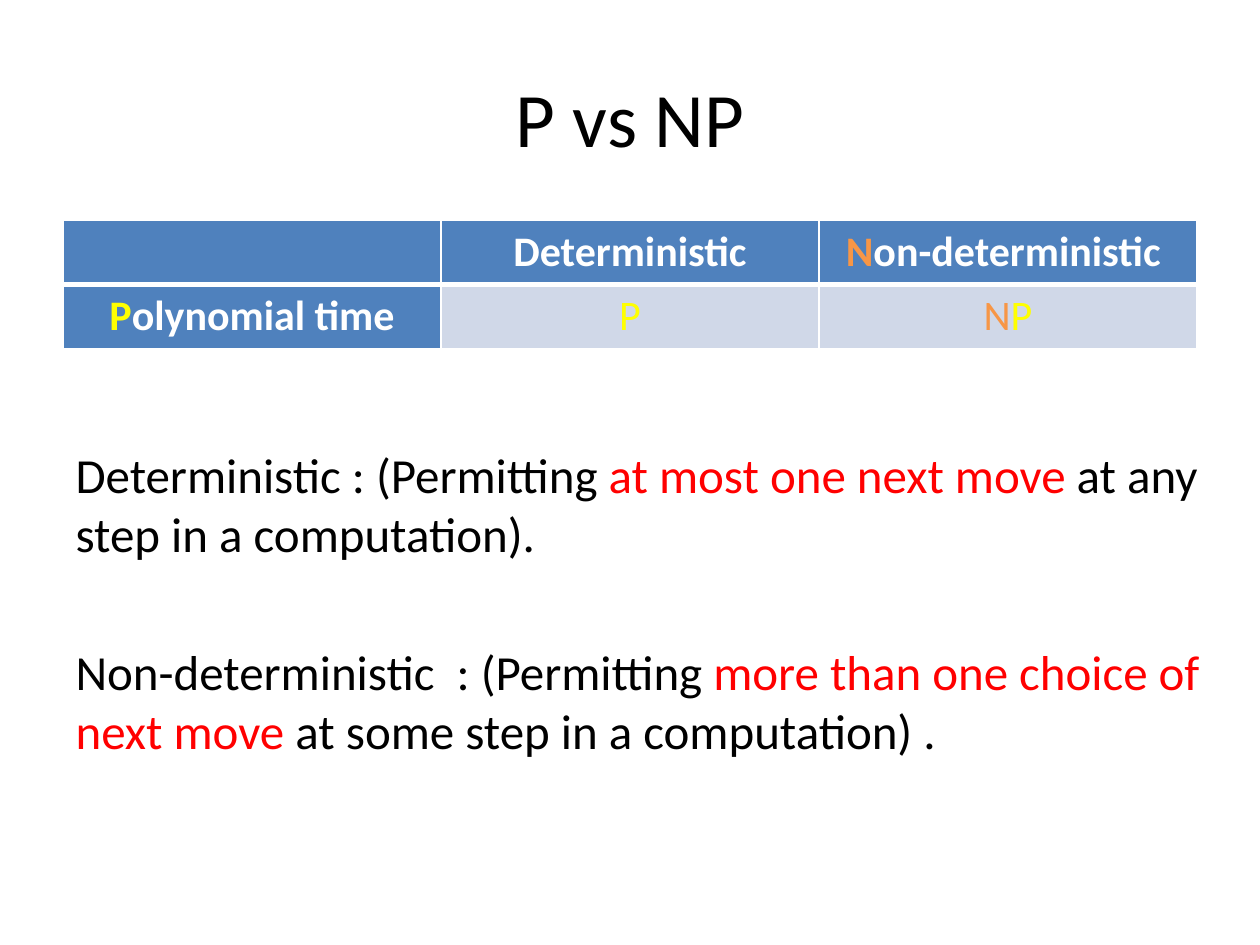
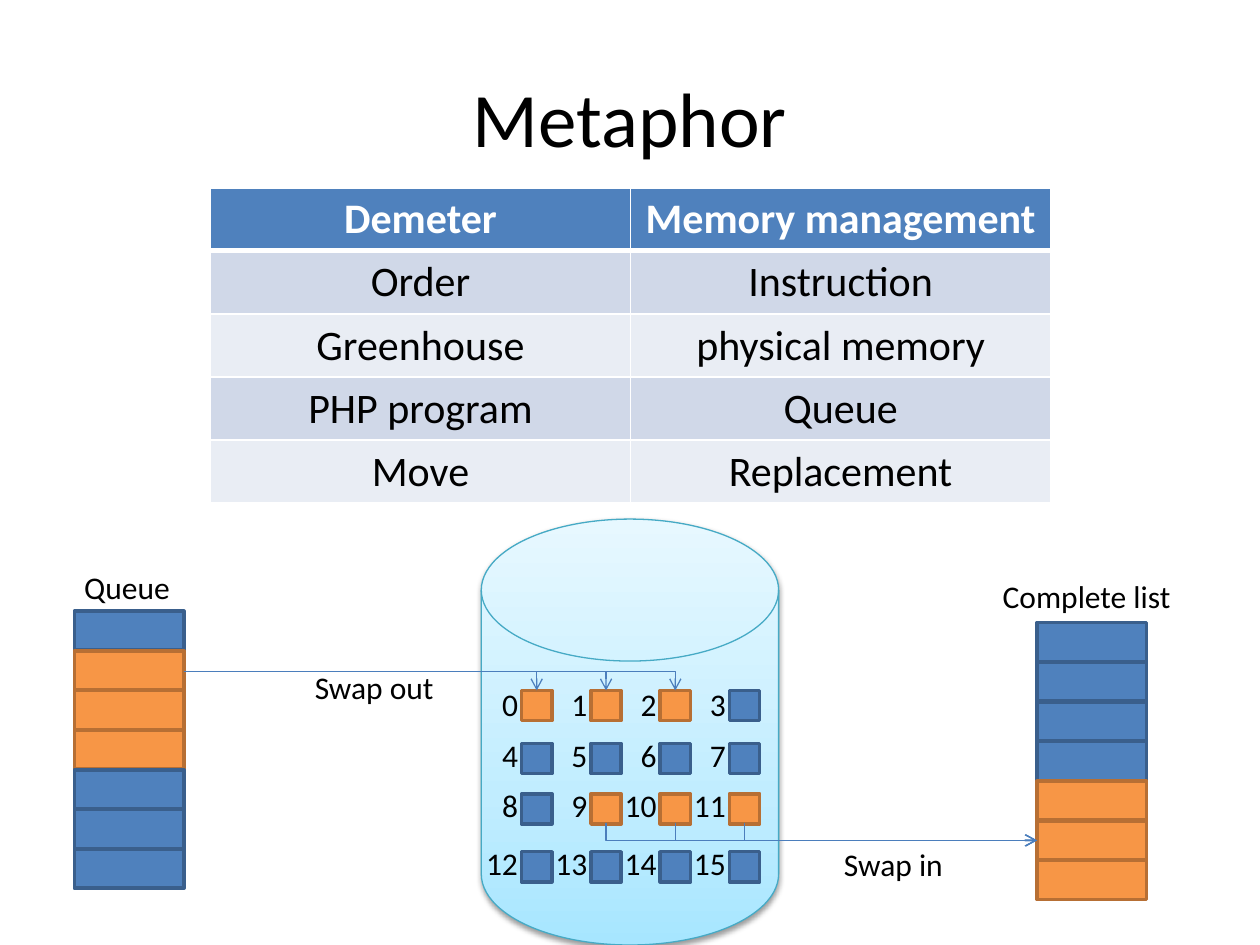
from dataclasses import dataclass

from lxml import etree
from pptx import Presentation
from pptx import util as u
from pptx.dml.color import RGBColor
from pptx.enum import shapes, text
from pptx.oxml import ns

In = u.Inches


@dataclass(frozen=True)
class Theme:
    font: str = "Calibri"
    black: str = "000000"
    white: str = "FFFFFF"
    blue: str = "4F81BD"
    blue_edge: str = "3A5F8C"
    orange: str = "F79646"
    orange_edge: str = "B76F34"
    yellow: str = "FFFF00"
    red: str = "FF0000"
    band: str = "D0D8E8"
    pale_band: str = "E9EDF4"
    arrow: str = "4B7EBC"
    disk_edge: str = "46AAC5"
    disk_stops: tuple = ((0, "A7E6FF"), (35, "C1EDFF"), (100, "E7F8FF"))
    title_size: int = 44
    body_size: int = 28
    cell_size: int = 24
    label_size: int = 18


THEME = Theme()


def assign(target, values):
    for name, value in values.items():
        setattr(target, name, value)


def add_xml(parent, tag, **attributes):
    return etree.SubElement(parent, ns.qn(tag),
                            {key: str(value) for key, value in attributes.items()})


class Deck:
    def __init__(self, theme):
        self.theme = theme
        self.presentation = Presentation()
        assign(self.presentation, {"slide_width": In(10), "slide_height": In(7.5)})
        self.slide = None

    def new_slide(self, layout, title):
        self.slide = self.presentation.slides.add_slide(
            self.presentation.slide_layouts[layout])
        heading = self.slide.shapes.title
        self.place(heading, 0.5, 0.3, 9, 1.25)
        heading.text_frame.vertical_anchor = text.MSO_ANCHOR.MIDDLE
        self.fill_paragraph(heading.text_frame.paragraphs[0], title,
                            self.theme.title_size, text.PP_ALIGN.CENTER)

    def place(self, shape, left, top, width, height):
        assign(shape, {"left": In(left), "top": In(top),
                       "width": In(width), "height": In(height)})

    def fill_paragraph(self, paragraph, content, size, align=text.PP_ALIGN.LEFT,
                       color=None, bold=False):
        """Fill a paragraph from a string or from (words, colour) pairs."""
        default = color or self.theme.black
        paragraph.alignment = align
        pieces = [(content, None)] if isinstance(content, str) else content
        for words, own_color in pieces:
            run = paragraph.add_run()
            run.text = words
            assign(run.font, {"name": self.theme.font, "size": u.Pt(size), "bold": bold})
            run.font.color.rgb = RGBColor.from_string(own_color or default)

    def body(self, box, paragraphs, gaps):
        """Set unbulleted paragraphs, each with its space before in points."""
        holder = self.slide.placeholders[1]
        self.place(holder, *box)
        frame = holder.text_frame
        assign(frame, {"auto_size": text.MSO_AUTO_SIZE.NONE, "word_wrap": True})
        for index, (content, gap) in enumerate(zip(paragraphs, gaps)):
            paragraph = frame.add_paragraph() if index else frame.paragraphs[0]
            self.fill_paragraph(paragraph, content, self.theme.body_size)
            paragraph.space_before = u.Pt(gap)
            properties = paragraph._p.get_or_add_pPr()
            properties.set("marL", "0")
            properties.set("indent", "0")
            add_xml(properties, "a:buNone")

    def label(self, words, left, top, width, align=text.PP_ALIGN.LEFT):
        box = self.slide.shapes.add_textbox(In(left), In(top), In(width), In(0.4))
        box.text_frame.word_wrap = False
        self.fill_paragraph(box.text_frame.paragraphs[0], words,
                            self.theme.label_size, align)

    def shape(self, kind, box, edge, weight, fill=None):
        shape = self.slide.shapes.add_shape(kind, *map(In, box))
        shape.shadow.inherit = False
        if fill:
            shape.fill.solid()
            shape.fill.fore_color.rgb = RGBColor.from_string(fill)
        shape.line.color.rgb = RGBColor.from_string(edge)
        shape.line.width = u.Pt(weight)
        return shape

    def block(self, box, is_swapped):
        theme = self.theme
        fill, edge = ((theme.orange, theme.orange_edge) if is_swapped
                      else (theme.blue, theme.blue_edge))
        self.shape(shapes.MSO_SHAPE.RECTANGLE, box, edge, 2, fill)

    def disk(self, *box):
        disk = self.shape(shapes.MSO_SHAPE.FLOWCHART_MAGNETIC_DISK, box,
                          self.theme.disk_edge, 0.75)
        disk.fill.gradient()
        disk.fill.gradient_angle = 90
        properties = disk._element.spPr
        stops = properties.find(ns.qn("a:gradFill")).find(ns.qn("a:gsLst"))
        for stop in list(stops):
            stops.remove(stop)
        for percent, color in self.theme.disk_stops:
            stop = add_xml(stops, "a:gs", pos=percent * 1000)
            add_xml(stop, "a:srgbClr", val=color)
        shadow = add_xml(properties.find(ns.qn("a:effectLst")), "a:outerShdw",
                         blurRad=u.Pt(3.1), dist=u.Pt(1.6), dir=5400000, rotWithShape=0)
        shade = add_xml(shadow, "a:srgbClr", val=self.theme.black)
        add_xml(shade, "a:alpha", val=38000)

    def bent_arrow(self, start, end, down_first=False):
        """Draw a one-corner arrow; down_first turns the preset a quarter round."""
        (x1, y1), (x2, y2) = start, end
        if down_first:
            mid_x, mid_y = (x1 + x2) / 2, (y1 + y2) / 2
            half_w, half_h = (y2 - y1) / 2, (x2 - x1) / 2
            x1, y1 = mid_x + half_w, mid_y - half_h
            x2, y2 = mid_x - half_w, mid_y + half_h
        arrow = self.slide.shapes.add_connector(
            shapes.MSO_CONNECTOR.ELBOW, In(x1), In(y1), In(x2), In(y2))
        arrow.line.color.rgb = RGBColor.from_string(self.theme.arrow)
        arrow.line.width = u.Pt(0.75)
        properties = arrow._element.spPr
        properties.find(ns.qn("a:prstGeom")).set("prst", "bentConnector2")
        if down_first:
            properties.find(ns.qn("a:xfrm")).set("rot", "16200000")
        add_xml(properties.find(ns.qn("a:ln")), "a:tailEnd", type="arrow")
        add_xml(properties, "a:effectLst")

    def border(self, cell, row):
        properties = cell._tc.get_or_add_tcPr()
        weights = {"L": 1, "R": 1, "T": 3 if row == 1 else 1, "B": 1 if row else 3}
        for side, weight in weights.items():
            line = add_xml(properties, f"a:ln{side}", w=u.Pt(weight))
            fill = add_xml(line, "a:solidFill")
            add_xml(fill, "a:srgbClr", val=self.theme.white)

    def table(self, left, top, width, rows, row_heads=False):
        theme = self.theme
        row_height, columns = 0.5, len(rows[0])
        grid = self.slide.shapes.add_table(
            len(rows), columns, In(left), In(top), In(width),
            In(row_height * len(rows))).table
        for row, contents in enumerate(rows):
            for column, content in enumerate(contents):
                cell = grid.cell(row, column)
                is_head = row == 0 or (row_heads and column == 0)
                self.border(cell, row)
                cell.fill.solid()
                cell.fill.fore_color.rgb = RGBColor.from_string(
                    theme.blue if is_head else theme.band if row % 2 else theme.pale_band)
                if content:
                    self.fill_paragraph(
                        cell.text_frame.paragraphs[0], content, theme.cell_size,
                        text.PP_ALIGN.CENTER,
                        theme.white if is_head else theme.black, is_head)


def complexity_slide(deck):
    theme = deck.theme
    deck.new_slide(1, "P vs NP")
    p, n = ("P", theme.yellow), ("N", theme.orange)
    deck.table(0.5, 1.75, 9, [
        ["", "Deterministic", [n, ("on-deterministic ", None)]],
        [[p, ("olynomial time", None)], [p], [n, p]],
    ], row_heads=True)
    deck.body((0.5, 3.48, 9.22, 3.74), [
        [("Deterministic : (Permitting ", None),
         ("at most one next move ", theme.red),
         ("at any step in a computation).", None)],
        [("Non-deterministic  : (Permitting ", None),
         ("more than one choice of next move ", theme.red),
         ("at some step in a computation) .", None)],
    ], gaps=(5.6, 45))


def metaphor_slide(deck):
    deck.new_slide(5, "Metaphor")
    deck.disk(3.82, 4.12, 2.36, 3.38)

    page_size = 0.24
    page_lefts = [4.14 + 0.55 * column for column in range(4)]
    page_rows = ((5.48, 5.39), (5.9, 5.79), (6.3, 6.19), (6.76, 6.65))
    swapped_out, swapped_in = (0, 1, 2), (9, 10, 11)
    for row, (page_top, number_top) in enumerate(page_rows):
        for column, left in enumerate(page_lefts):
            page = row * 4 + column
            deck.block((left, page_top, page_size, page_size),
                       page in swapped_out + swapped_in)
            deck.label(str(page), left - 0.39, number_top, 0.46, text.PP_ALIGN.RIGHT)

    slot_width, slot_height, queue_length = 0.87, 0.31, 7
    slot_pitch = 1.89 / (queue_length - 1)
    queue_left, complete_left = 0.59, 8.23
    for left, top, swapped in ((queue_left, 4.85, (1, 2, 3)),
                               (complete_left, 4.94, (4, 5, 6))):
        for slot in range(queue_length):
            deck.block((left, top + slot * slot_pitch, slot_width, slot_height),
                       slot in swapped)

    def page_middle(page):
        return page_lefts[page % 4] + page_size / 2

    for page in swapped_out:
        deck.bent_arrow((queue_left + slot_width, 5.33), (page_middle(page), 5.48))
    for page in swapped_in:
        deck.bent_arrow((page_middle(page), 6.53), (complete_left, 6.67), down_first=True)

    deck.table(1.67, 1.49, 6.67, [
        ["Demeter", "Memory management"],
        ["Order", "Instruction"],
        ["Greenhouse", "physical memory"],
        ["PHP program", "Queue"],
        ["Move", "Replacement"],
    ])
    for caption in (("Swap out", 2.4, 5.25, 1.16), ("Swap in", 6.6, 6.66, 1),
                    ("Queue", 0.57, 4.46, 0.89), ("Complete list", 7.86, 4.53, 1.55)):
        deck.label(*caption)


def main():
    deck = Deck(THEME)
    complexity_slide(deck)
    metaphor_slide(deck)
    deck.presentation.save("out.pptx")


if __name__ == "__main__":
    main()
